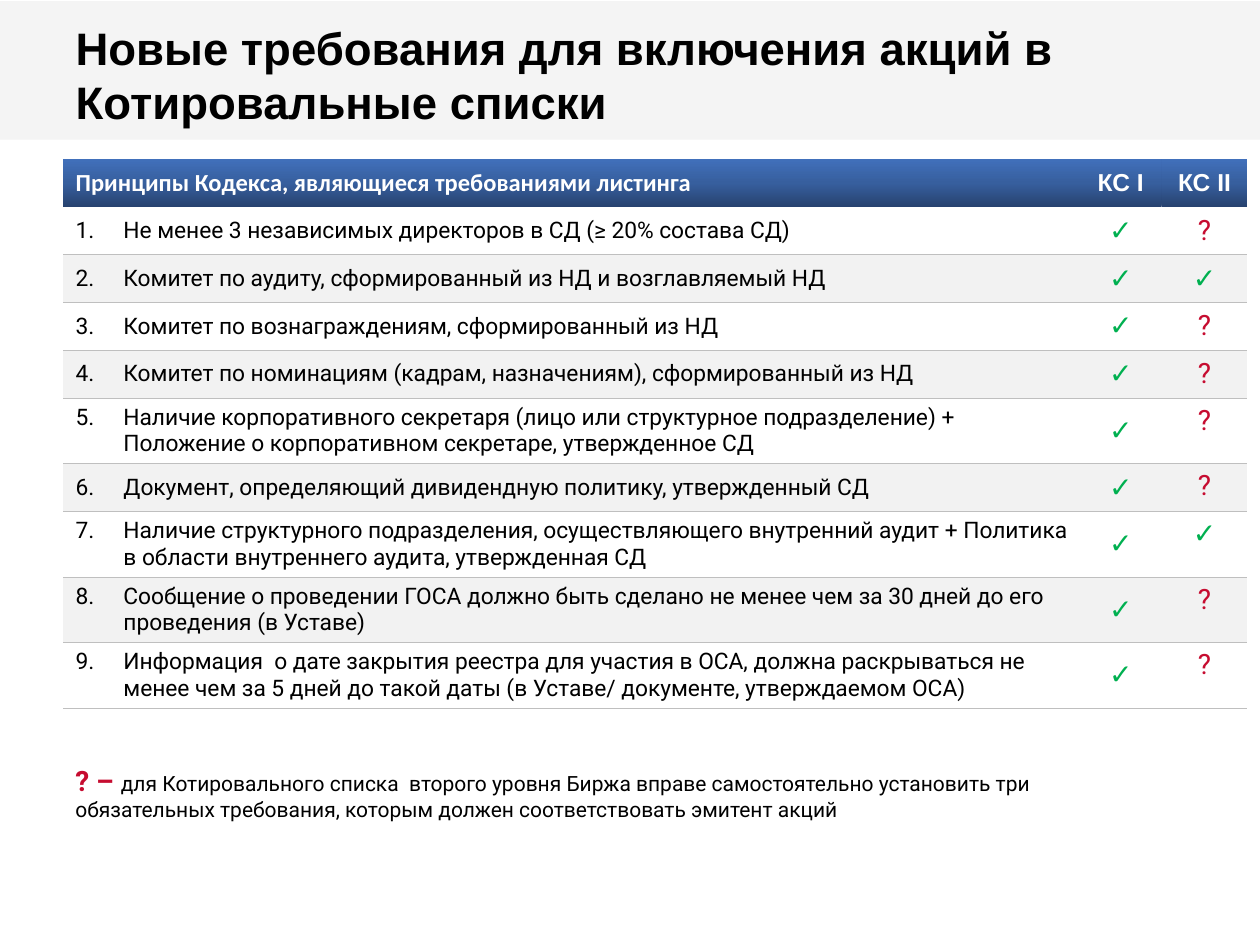
from lxml.etree import SubElement
from pptx import Presentation
from pptx.dml.color import RGBColor
from pptx.enum.shapes import MSO_SHAPE
from pptx.enum.text import MSO_ANCHOR, MSO_AUTO_SIZE, PP_ALIGN
from pptx.oxml import parse_xml
from pptx.oxml.ns import nsdecls, qn
from pptx.util import Inches, Pt

COLORS = {
    "black": "000000", "white": "FFFFFF", "band": "F4F4F4", "stripe": "F2F2F2",
    "rule": "BFBFBF", "yes": "00B050", "open": "C60C30",
    "header_dark": "27426F", "header_mid": "375F9E", "header_light": "4170BB",
}
YES, OPEN = "✓", "?"
NO_GRID_STYLE = "{2D5ABB26-0587-4C30-8999-92F81FD0307C}"
HEADERS = [
    ("Принципы Кодекса, являющиеся требованиями листинга", "Calibri"),
    ("КС I", "Arial"),
    ("КС II", "Arial"),
]
REQUIREMENTS = [
    ("Не менее 3 независимых директоров в СД (≥ 20% состава СД)", OPEN),
    ("Комитет по аудиту, сформированный из НД и возглавляемый НД", YES),
    ("Комитет по вознаграждениям, сформированный из НД", OPEN),
    ("Комитет по номинациям (кадрам, назначениям), сформированный из НД", OPEN),
    ("Наличие корпоративного секретаря (лицо или структурное подразделение) + "
     "Положение о корпоративном секретаре, утвержденное СД", OPEN),
    ("Документ, определяющий дивидендную политику, утвержденный СД", OPEN),
    ("Наличие структурного подразделения, осуществляющего внутренний аудит + "
     "Политика в области внутреннего аудита, утвержденная СД", YES),
    ("Сообщение о проведении ГОСА должно быть сделано не менее чем за 30 дней "
     "до его проведения (в Уставе)", OPEN),
    ("Информация  о дате закрытия реестра для участия в ОСА, должна раскрываться "
     "не менее чем за 5 дней до такой даты (в Уставе/ документе, утверждаемом ОСА)", OPEN),
]
FIRST_TOP_ANCHORED = 5


class ListingSlide:
    """Draws on one slide laid out on a grid of 20 columns by 15 rows."""

    def __init__(self):
        self.deck = Presentation()
        self.deck.slide_width, self.deck.slide_height = Inches(10), Inches(7.5)
        self.column = self.deck.slide_width / 20
        self.row = self.deck.slide_height / 15
        self.slide = self.deck.slides.add_slide(self.deck.slide_layouts[5])

    def place(self, left, top, width, height):
        return (round(left * self.column), round(top * self.row),
                round(width * self.column), round(height * self.row))

    def add_text(self, paragraph, text, size, color, font="Roboto", bold=False):
        run = paragraph.add_run()
        run.text = text
        run.font.name, run.font.size, run.font.bold = font, Pt(size), bold
        run.font.color.rgb = RGBColor.from_string(COLORS[color])

    def band(self, *spot):
        band = self.slide.shapes.add_shape(MSO_SHAPE.RECTANGLE, *self.place(*spot))
        band.shadow.inherit = False
        band.fill.solid()
        band.fill.fore_color.rgb = RGBColor.from_string(COLORS["band"])
        band.line.fill.background()
        title = self.slide.shapes.title.element
        title.addprevious(band.element)

    def title(self, text, *spot):
        title = self.slide.shapes.title
        title.left, title.top, title.width, title.height = self.place(*spot)
        frame = title.text_frame
        frame.auto_size, frame.word_wrap = MSO_AUTO_SIZE.NONE, True
        frame.vertical_anchor = MSO_ANCHOR.MIDDLE
        frame.paragraphs[0].alignment = PP_ALIGN.LEFT
        self.add_text(frame.paragraphs[0], text, 26, "black", "Arial", True)

    def footnote(self, mark, text, *spot):
        frame = self.slide.shapes.add_textbox(*self.place(*spot)).text_frame
        frame.word_wrap = True
        paragraph = frame.paragraphs[0]
        paragraph.space_after = Pt(12)
        self.add_text(paragraph, mark, 16, "open", bold=True)
        self.add_text(paragraph, text, 12, "black")

    def table(self, widths, row_height, left, top):
        row_count = len(REQUIREMENTS) + 1
        spot = self.place(left, top, sum(widths), row_height * row_count)
        table = self.slide.shapes.add_table(row_count, len(widths), *spot).table
        table._tbl.tblPr.find(qn("a:tableStyleId")).text = NO_GRID_STYLE
        for column, width in zip(table.columns, widths):
            column.width = round(width * self.column)
        for row in table.rows:
            row.height = round(row_height * self.row)
        for index, (text, font) in enumerate(HEADERS):
            self.header_cell(table.cell(0, index), text, font, centred=index > 0)
        for number, (requirement, second_level) in enumerate(REQUIREMENTS, 1):
            cells = [table.cell(number, index) for index in range(len(widths))]
            for cell in cells:
                self.body_style(cell, "white" if number % 2 else "stripe")
            self.numbered(cells[0].text_frame.paragraphs[0], requirement, number)
            self.mark(cells[1], YES)
            self.mark(cells[2], second_level)
            if number >= FIRST_TOP_ANCHORED:
                cells[2].vertical_anchor = MSO_ANCHOR.TOP

    def header_cell(self, cell, text, font, centred):
        cell.vertical_anchor = MSO_ANCHOR.MIDDLE
        stops = "".join(
            f'<a:gs pos="{share * 1000}"><a:srgbClr val="{COLORS[name]}"/></a:gs>'
            for share, name in ((0, "header_dark"), (50, "header_mid"), (100, "header_light")))
        cell._tc.get_or_add_tcPr().append(parse_xml(
            f'<a:gradFill {nsdecls("a")}><a:gsLst>{stops}</a:gsLst>'
            '<a:lin ang="16200000" scaled="0"/></a:gradFill>'))
        paragraph = cell.text_frame.paragraphs[0]
        paragraph.alignment = PP_ALIGN.CENTER if centred else PP_ALIGN.LEFT
        self.add_text(paragraph, text, 14, "white", font, True)

    def body_style(self, cell, fill):
        cell.vertical_anchor = MSO_ANCHOR.MIDDLE
        cell.fill.solid()
        cell.fill.fore_color.rgb = RGBColor.from_string(COLORS[fill])
        cell._tc.get_or_add_tcPr().insert(0, parse_xml(
            f'<a:lnB {nsdecls("a")} w="{Pt(0.5)}"><a:solidFill>'
            f'<a:srgbClr val="{COLORS["rule"]}"/></a:solidFill></a:lnB>'))

    def numbered(self, paragraph, text, number):
        properties = paragraph._p.get_or_add_pPr()
        indent = Inches(0.38)
        properties.set("marL", str(indent))
        properties.set("indent", str(-indent))
        SubElement(properties, qn("a:buAutoNum"), type="arabicPeriod", startAt=str(number))
        self.add_text(paragraph, text, 13, "black")

    def mark(self, cell, symbol):
        paragraph = cell.text_frame.paragraphs[0]
        paragraph.alignment = PP_ALIGN.CENTER
        passed = symbol == YES
        self.add_text(paragraph, symbol, 16, "yes" if passed else "open", bold=passed)


def main():
    listing = ListingSlide()
    listing.band(0, 0.02, 20, 2.2)
    listing.title("Новые требования для включения акций в Котировальные списки",
                  1, 0.32, 18, 1.72)
    listing.table((16.14, 1.3, 1.36), 0.76, 1, 2.52)
    listing.footnote(
        "? – ",
        "для Котировального списка  второго уровня Биржа вправе самостоятельно "
        "установить три обязательных требования, которым должен соответствовать "
        "эмитент акций",
        1, 12.02, 17.52, 1.14)
    listing.deck.save("out.pptx")


if __name__ == "__main__":
    main()
